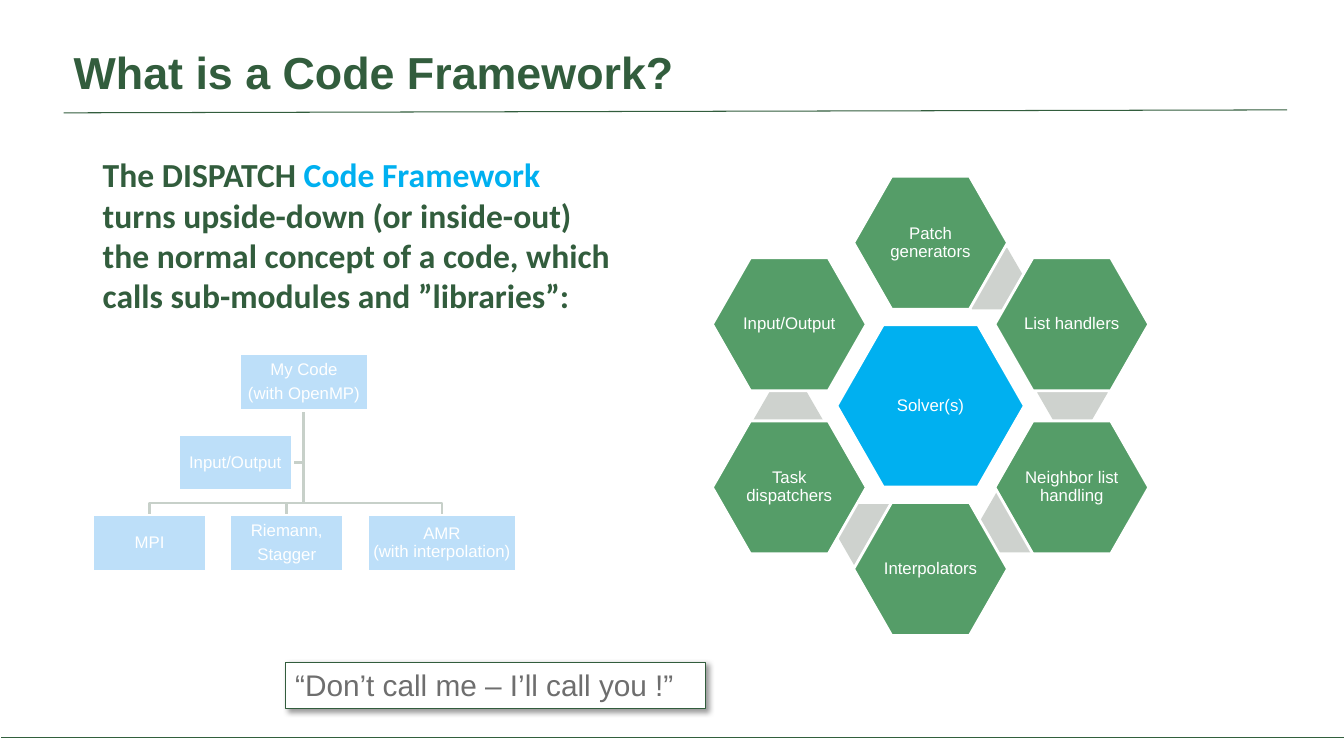
import math
from dataclasses import dataclass

import lxml.etree
import pptx
import pptx.dml.color
import pptx.enum.shapes
import pptx.enum.text
import pptx.oxml.ns
import pptx.util

Pt = pptx.util.Pt
Preset = pptx.enum.shapes.MSO_SHAPE
Align = pptx.enum.text.PP_ALIGN
Anchor = pptx.enum.text.MSO_ANCHOR
qn = pptx.oxml.ns.qn

COLOURS = {
    "forest": "325D3D",
    "footer": "32603D",
    "green": "559D68",
    "sky": "00B0F0",
    "blue": "0086EA",
    "link": "CED2CE",
    "branch": "284A31",
    "quote": "6E6E6E",
    "white": "FFFFFF",
    "black": "000000",
}


@dataclass(frozen=True)
class Box:
    left: float
    top: float
    width: float
    height: float

    @property
    def centre(self) -> float:
        return self.left + self.width / 2

    @property
    def bottom(self) -> float:
        return self.top + self.height


@dataclass(frozen=True)
class Node:
    paragraphs: tuple[str, ...]
    box: Box


@dataclass(frozen=True)
class Petal:
    label: str
    angle: int
    link: tuple[float, float] | None = None


@dataclass(frozen=True)
class Rule:
    start: tuple[float, float]
    end: tuple[float, float]
    colour: str


RULES = (
    Rule((960, 527), (0.7, 527), "footer"),
    Rule((45.4, 80.6), (919.4, 78.5), "forest"),
)
HUB = (664.7, 289.9)
RING_RADIUS = 116.5
PETALS = (
    Petal("Patch generators", -90, (681.8, 177.1)),
    Petal("List handlers", -30, (740.9, 258.5)),
    Petal("Neighbor list handling", 30, (699.8, 350.6)),
    Petal("Interpolators", 90, (597.6, 360)),
    Petal("Task dispatchers", 150, (537.8, 278.6)),
    Petal("Input/Output", 210),
)
ROOT = Node(("My Code", "(with OpenMP)"), Box(171, 252.7, 92.2, 40.3))
ASSISTANT = Node(("Input/Output",), Box(127.4, 310.3, 81.4, 40.3))
MODULES = (
    Node(("MPI",), Box(66.2, 367.9, 81.4, 40.3)),
    Node(("Riemann,", "Stagger"), Box(164.2, 367.9, 81.4, 40.3)),
    Node(("AMR\n(with interpolation)",), Box(262.8, 367.9, 105.8, 40.3)),
)
BAR_TOP = 359.3


def rgb(name: str) -> pptx.dml.color.RGBColor:
    return pptx.dml.color.RGBColor.from_string(COLOURS[name])


def place(shape, box: Box) -> None:
    shape.left, shape.top = Pt(box.left), Pt(box.top)
    shape.width, shape.height = Pt(box.width), Pt(box.height)


def add_run(paragraph, text: str, size: float, colour: str,
            name: str = "Arial", bold: bool = False) -> None:
    run = paragraph.add_run()
    run.text = text
    run.font.size = Pt(size)
    run.font.name = name
    run.font.bold = bold
    run.font.color.rgb = rgb(colour)


def set_margins(frame, margin: float) -> None:
    frame.margin_left = frame.margin_right = Pt(margin)
    frame.margin_top = frame.margin_bottom = Pt(margin)


def add_filled(slide, preset, box: Box, fill: str, line: str | None = None,
               width: float = 2):
    shape = slide.shapes.add_shape(
        preset, Pt(box.left), Pt(box.top), Pt(box.width), Pt(box.height))
    shape.shadow.inherit = False
    shape.fill.solid()
    shape.fill.fore_color.rgb = rgb(fill)
    if line:
        shape.line.color.rgb = rgb(line)
        shape.line.width = Pt(width)
    else:
        shape.line.fill.background()
    return shape


def add_hexagon(slide, box: Box, fill: str, adjust: float = 0.286,
                line: str | None = "white"):
    shape = add_filled(slide, Preset.HEXAGON, box, fill, line)
    shape.adjustments[0] = adjust
    shape.adjustments[1] = 1.155
    return shape


def add_label(shape, paragraphs: tuple[str, ...], margin: float) -> None:
    frame = shape.text_frame
    frame.word_wrap = True
    frame.vertical_anchor = Anchor.MIDDLE
    set_margins(frame, margin)
    for index, text in enumerate(paragraphs):
        paragraph = frame.add_paragraph() if index else frame.paragraphs[0]
        paragraph.alignment = Align.CENTER
        paragraph.line_spacing = 0.9
        paragraph.space_after = Pt(4.2 if index < len(paragraphs) - 1 else 0)
        for number, line in enumerate(text.split("\n")):
            if number:
                paragraph.add_line_break()
            add_run(paragraph, line, 12, "white")


def add_rule(slide, rule: Rule) -> None:
    connector = slide.shapes.add_connector(
        pptx.enum.shapes.MSO_CONNECTOR.STRAIGHT,
        *(Pt(value) for value in rule.start + rule.end))
    connector.line.color.rgb = rgb(rule.colour)
    connector.line.width = Pt(0.75)
    lxml.etree.SubElement(connector._element.spPr, qn("a:effectLst"))


def add_branch(slide, points: list[tuple[float, float]]) -> None:
    corners = [(Pt(x), Pt(y)) for x, y in points]
    builder = slide.shapes.build_freeform(*corners[0])
    builder.add_line_segments(corners[1:], close=False)
    shape = builder.convert_to_shape()
    shape.shadow.inherit = False
    shape.fill.background()
    shape.line.color.rgb = rgb("branch")
    shape.line.width = Pt(2)


def add_headings(slide) -> None:
    title, body = slide.shapes.title, slide.placeholders[1]
    place(title, Box(45.4, 37.4, 874, 28.1))
    place(body, Box(66.2, 103, 380.9, 332.6))
    for shape, anchor in ((title, Anchor.MIDDLE), (body, Anchor.TOP)):
        frame = shape.text_frame
        frame.word_wrap = True
        frame.auto_size = pptx.enum.text.MSO_AUTO_SIZE.NONE
        frame.vertical_anchor = anchor
        set_margins(frame, 7.2)
        frame.paragraphs[0].alignment = Align.LEFT
        frame.paragraphs[0].space_before = Pt(0)
    add_run(title.text_frame.paragraphs[0], "What is a Code Framework?",
            32, "forest", bold=True)
    paragraph = body.text_frame.paragraphs[0]
    properties = paragraph._p.get_or_add_pPr()
    properties.set("marL", "0")
    properties.set("indent", "0")
    lxml.etree.SubElement(properties, qn("a:buNone"))
    for text, colour in (
        ("The DISPATCH ", "forest"),
        ("Code Framework ", "sky"),
        ("turns upside-down (or inside-out) the normal concept of a code, "
         "which calls sub-modules and ”libraries”:", "forest"),
    ):
        add_run(paragraph, text, 24, colour, "Calibri", True)


def add_flower(slide) -> None:
    x, y = HUB
    solver = add_hexagon(slide, Box(x - 67, y - 58, 134, 116), "sky")
    add_label(solver, ("Solver(s)",), 1.5)
    for petal in PETALS:
        if petal.link:
            add_hexagon(slide, Box(*petal.link, 50.4, 43.9), "link", 0.289, None)
        angle = math.radians(petal.angle)
        left = x + RING_RADIUS * math.cos(angle) - 55
        top = y + RING_RADIUS * math.sin(angle) - 47.5
        shape = add_hexagon(slide, Box(left, top, 110, 95), "green")
        add_label(shape, (petal.label,), 1.5)


def add_tree(slide) -> None:
    stem = (ROOT.box.centre, ROOT.box.bottom)
    middle = ASSISTANT.box.top + ASSISTANT.box.height / 2
    side = ASSISTANT.box.left + ASSISTANT.box.width
    add_branch(slide, [stem, (stem[0], middle), (side, middle)])
    for node in MODULES:
        centre = node.box.centre
        add_branch(slide, [stem, (stem[0], BAR_TOP), (centre, BAR_TOP),
                           (centre, node.box.top)])
    for node in (ROOT, *MODULES, ASSISTANT):
        shape = add_filled(slide, Preset.RECTANGLE, node.box, "blue", "white")
        add_label(shape, node.paragraphs, 0.75)
    veil = add_filled(slide, Preset.RECTANGLE,
                      Box(59.8, 239.8, 325.4, 203), "white")
    colour = veil._element.spPr.find(qn("a:solidFill")).find(qn("a:srgbClr"))
    lxml.etree.SubElement(colour, qn("a:alpha"), val="74000")


def add_quote(slide) -> None:
    shape = add_filled(slide, Preset.RECTANGLE, Box(203.8, 473, 300.2, 33.1),
                       "white", "forest", 0.75)
    effects = shape._element.spPr.find(qn("a:effectLst"))
    shadow = lxml.etree.SubElement(
        effects, qn("a:outerShdw"), blurRad=str(Pt(4)), dist=str(Pt(3)),
        dir="2700000", algn="tl", rotWithShape="0")
    colour = lxml.etree.SubElement(shadow, qn("a:srgbClr"), val=COLOURS["black"])
    lxml.etree.SubElement(colour, qn("a:alpha"), val="40000")
    frame = shape.text_frame
    frame.word_wrap = True
    frame.auto_size = pptx.enum.text.MSO_AUTO_SIZE.SHAPE_TO_FIT_TEXT
    frame.vertical_anchor = Anchor.TOP
    frame.paragraphs[0].alignment = Align.LEFT
    add_run(frame.paragraphs[0], "“Don’t call me – I’ll call you !”", 21.3, "quote")


def main() -> None:
    presentation = pptx.Presentation()
    presentation.slide_width, presentation.slide_height = Pt(960), Pt(540)
    slide = presentation.slides.add_slide(presentation.slide_layouts[1])
    for rule in RULES:
        add_rule(slide, rule)
    add_headings(slide)
    add_flower(slide)
    add_tree(slide)
    add_quote(slide)
    presentation.save("out.pptx")


if __name__ == "__main__":
    main()
